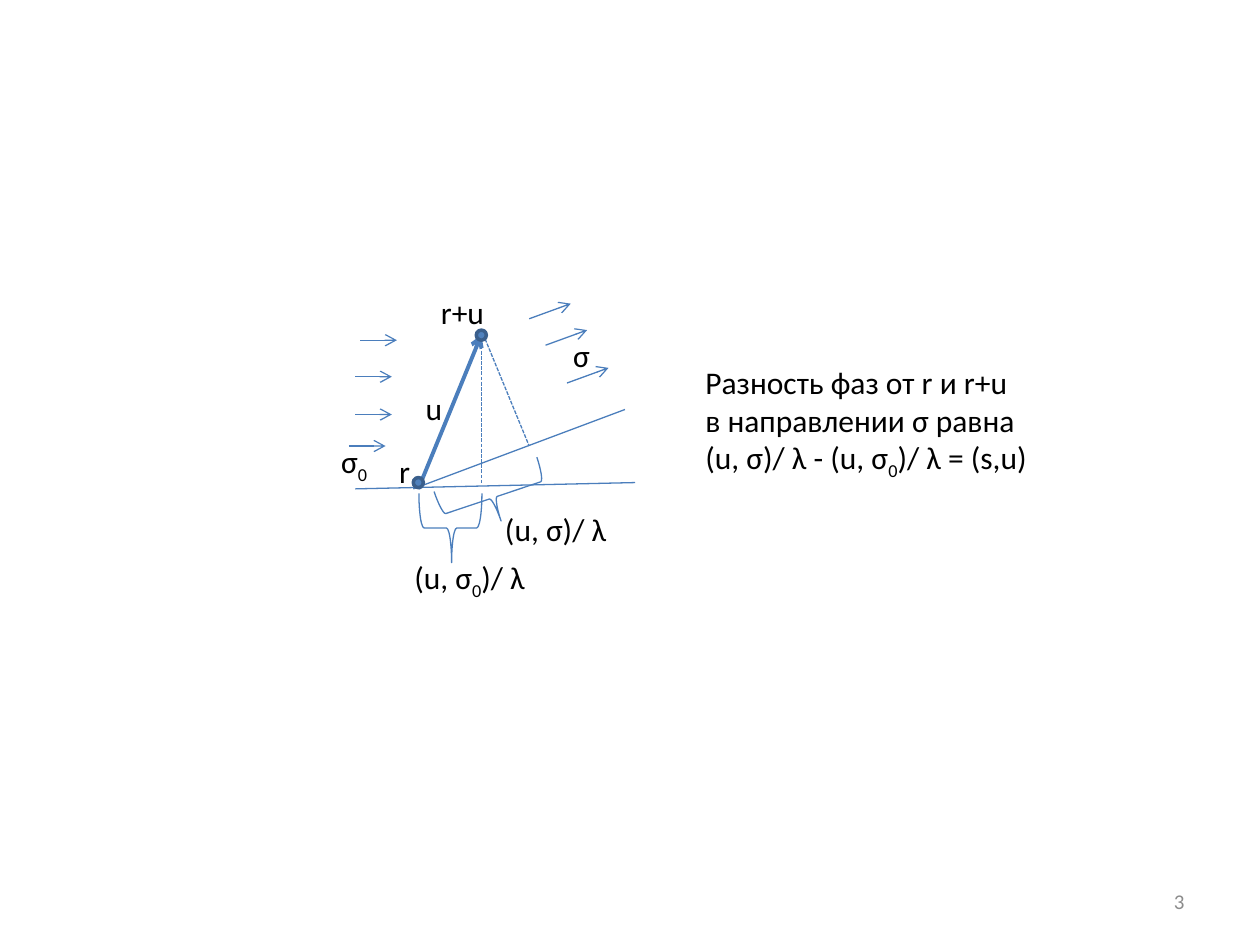
from lxml.etree import SubElement
from pptx import Presentation
from pptx.dml.color import RGBColor
from pptx.enum.dml import MSO_LINE
from pptx.enum.shapes import MSO_CONNECTOR, MSO_SHAPE
from pptx.enum.text import MSO_ANCHOR, MSO_AUTO_SIZE, PP_ALIGN
from pptx.oxml.ns import qn
from pptx.util import Inches, Pt

LINE = "4B7EBC"
WIDE = 2.25
DASH = MSO_LINE.SQUARE_DOT


def color(value):
    return RGBColor.from_string(value)


def write(p, text, size=18, fill="000000", font="Calibri", align=PP_ALIGN.LEFT):
    p.alignment = align
    for i, part in enumerate(text.split("_")):
        r = p.add_run()
        r.text = part
        r.font.name = font
        r.font.size = Pt(size)
        r.font.color.rgb = color(fill)
        if i % 2:
            r.font._element.set("baseline", "-25000")


class Diagram:
    def __init__(self, s):
        self.s = s

    def text(self, x, y, w, h, *lines, wrap=False, anchor=MSO_ANCHOR.TOP, **style):
        tf = self.s.shapes.add_textbox(Inches(x), Inches(y), Inches(w), Inches(h)).text_frame
        tf.word_wrap = wrap
        tf.auto_size = MSO_AUTO_SIZE.NONE if anchor == MSO_ANCHOR.MIDDLE else MSO_AUTO_SIZE.SHAPE_TO_FIT_TEXT
        tf.vertical_anchor = anchor
        for i, line in enumerate(lines):
            write(tf.add_paragraph() if i else tf.paragraphs[0], line, **style)

    def line(self, x1, y1, x2, y2, width=0.75, dash=None, arrow=False):
        c = self.s.shapes.add_connector(
            MSO_CONNECTOR.STRAIGHT, Inches(x1), Inches(y1), Inches(x2), Inches(y2))
        c.line.color.rgb = color(LINE)
        c.line.width = Pt(width)
        if dash:
            c.line.dash_style = dash
        if arrow:
            SubElement(c.line._get_or_add_ln(), qn("a:tailEnd"), type="arrow")
        SubElement(c._element.spPr, qn("a:effectLst"))

    def shape(self, kind, x, y, w, h, line=LINE, width=0.75, fill=None, rotation=0):
        sp = self.s.shapes.add_shape(kind, Inches(x), Inches(y), Inches(w), Inches(h))
        sp.shadow.inherit = False
        sp.rotation = rotation
        sp.line.color.rgb = color(line)
        sp.line.width = Pt(width)
        if fill:
            sp.fill.solid()
            sp.fill.fore_color.rgb = color(fill)
        else:
            sp.fill.background()
        return sp

    def dot(self, x, y, size=0.08):
        self.shape(MSO_SHAPE.OVAL, x, y, size, size, line="3A5F8C", width=2, fill="4F81BD")

    def brace(self, x, y, w, h, rotation, adjustments=()):
        sp = self.shape(MSO_SHAPE.LEFT_BRACE, x, y, w, h, rotation=rotation)
        for i, value in enumerate(adjustments):
            sp.adjustments[i] = value


def main():
    prs = Presentation()
    prs.slide_width, prs.slide_height = Inches(10), Inches(7.5)
    d = Diagram(prs.slides.add_slide(prs.slide_layouts[6]))

    d.text(7.17, 6.95, 2.33, 0.4, "3", wrap=True, anchor=MSO_ANCHOR.MIDDLE,
           size=12, fill="8C8C8C", align=PP_ALIGN.RIGHT)

    d.line(3.32, 3.88, 3.82, 2.66, width=WIDE, arrow=True)
    d.line(2.82, 3.88, 5.04, 3.83)
    d.line(3.28, 3.88, 4.96, 3.25)
    d.line(3.85, 2.69, 4.2, 3.54, dash=DASH)
    d.line(3.82, 2.62, 3.82, 3.83, dash=DASH)
    d.dot(3.28, 3.79)
    d.dot(3.78, 2.62)

    for x, y, w, label in [
        (3.19, 4.38, 1.14, "(u, σ_0_)/ λ"),
        (3.4, 2.28, 0.55, "r+u"),
        (3.07, 3.54, 0.29, "r"),
        (3.28, 3.04, 0.34, "u"),
        (2.61, 3.46, 0.44, "σ_0"),
        (4.45, 2.62, 0.35, "σ"),
    ]:
        d.text(x, y, w, 0.4, label)

    for x, y in [(2.86, 2.7), (2.82, 2.99), (2.82, 3.29), (2.77, 3.54)]:
        d.line(x, y, x + 0.29, y, arrow=True)
    for x, y in [(4.2, 2.53), (4.33, 2.74), (4.5, 3.04)]:
        d.line(x, y, x + 0.33, y - 0.12, arrow=True)

    d.text(3.91, 4, 1.06, 0.4, "(u, σ)/ λ", wrap=True)
    d.brace(3.72, 3.52, 0.39, 0.86, 251.5)
    d.brace(3.3, 3.94, 0.55, 0.5, 270, (0.083, 0.519))

    d.text(5.5, 2.83, 2.88, 1.01, "Разность фаз от r и r+u", "в направлении σ равна",
           "(u, σ)/ λ - (u, σ_0_)/ λ = (s,u)")

    prs.save("out.pptx")


if __name__ == "__main__":
    main()
